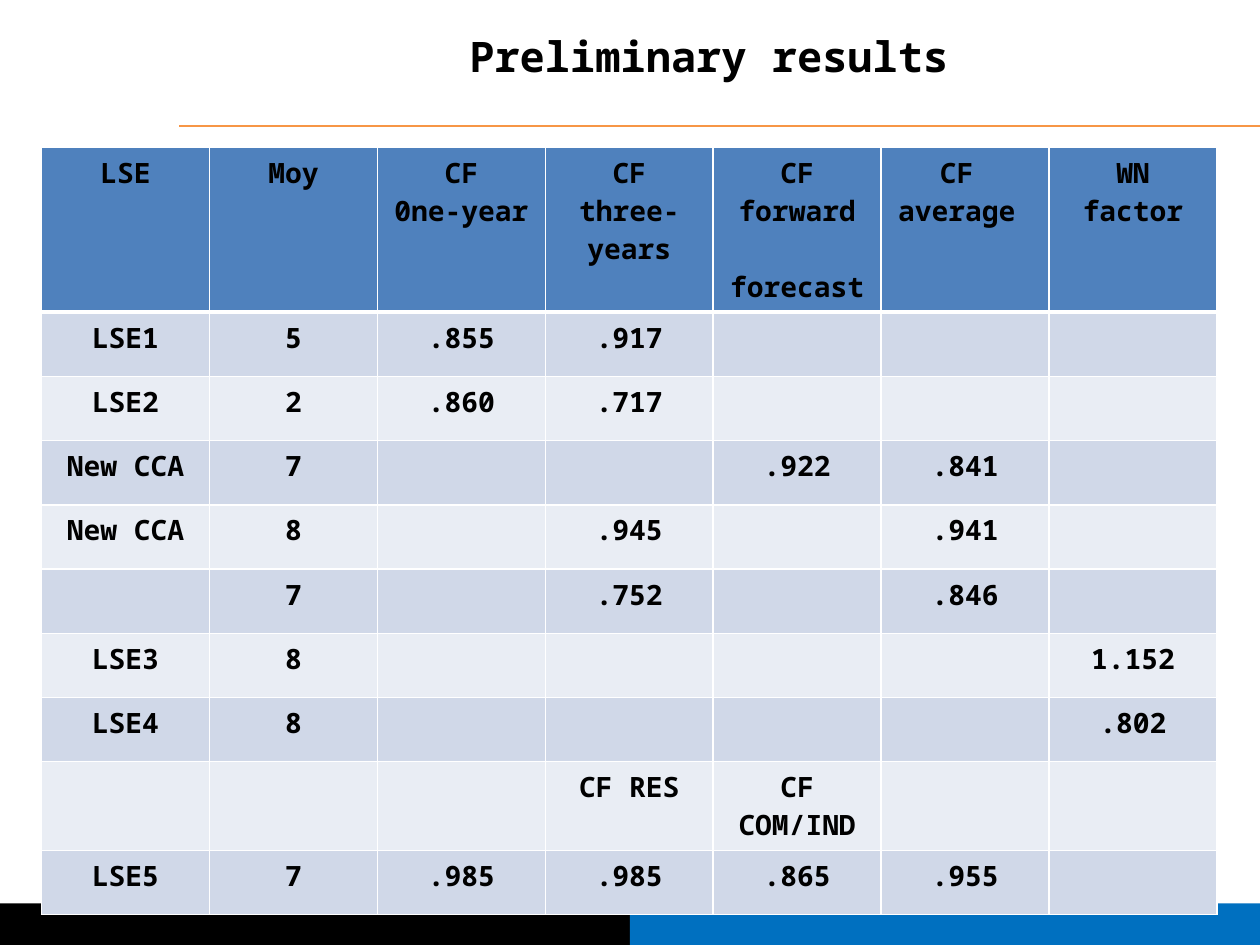
from lxml import etree
from pptx import Presentation
from pptx.dml.color import RGBColor
from pptx.enum.shapes import MSO_CONNECTOR, MSO_SHAPE
from pptx.enum.text import MSO_ANCHOR, PP_ALIGN
from pptx.oxml.ns import qn
from pptx.util import Inches, Pt

CENTER = PP_ALIGN.CENTER
TOP = MSO_ANCHOR.TOP
RECTANGLE = MSO_SHAPE.RECTANGLE
STRAIGHT = MSO_CONNECTOR.STRAIGHT
FONT = "Noto Sans Mono"
HEADER_FILL = "4F81BD"
BAND_FILLS = ("E9EDF4", "D0D8E8")
TITLE_ONLY = 5

RESULTS = [
    ["LSE", "Moy", "CF\n0ne-year", "CF\nthree-years", "CF forward\n forecast",
     "CF \naverage ", "WN factor"],
    ["LSE1", "5", ".855", ".917", "", "", ""],
    ["LSE2", "2", ".860", ".717", "", "", ""],
    ["New CCA", "7", "", "", ".922", ".841", ""],
    ["New CCA", "8", "", ".945", "", ".941", ""],
    ["", "7", "", ".752", "", ".846", ""],
    ["LSE3", "8", "", "", "", "", "1.152"],
    ["LSE4", "8", "", "", "", "", ".802"],
    ["", "", "", "CF RES", "CF COM/IND", "", ""],
    ["LSE5", "7", ".985", ".985", ".865", ".955", ""],
]
ROW_HEIGHTS = [1.24] + [0.51] * 7 + [0.62, 0.51]


def color(hex_string):
    """Turn a hex string into a colour."""
    return RGBColor.from_string(hex_string)


def format_text(frame, size):
    """Centre every paragraph and set its runs in bold black."""
    for para in frame.paragraphs:
        para.alignment = CENTER
        for span in para.runs:
            span.font.name = FONT
            span.font.size = Pt(size)
            span.font.bold = True
            span.font.color.rgb = color("000000")


def add_title(page, left, top, width, height):
    """Place and format the title placeholder."""
    title = page.shapes.title
    title.left, title.top, title.width, title.height = map(
        Inches, (left, top, width, height))
    frame = title.text_frame
    frame.text = "Preliminary results"
    frame.vertical_anchor = TOP
    format_text(frame, 24)


def add_rule(page, left, top, width):
    """Draw the orange rule below the title."""
    rule = page.shapes.add_connector(
        STRAIGHT, Inches(left + width), Inches(top), Inches(left), Inches(top))
    rule.line.color.rgb = color("F79646")
    rule.line.width = Pt(0.75)
    etree.SubElement(rule._element.spPr, qn("a:effectLst"))


def add_footer(page, left, top, width, height):
    """Draw the footer as two bars of equal width."""
    half = width / 2
    for index, fill in enumerate(("000000", "0070C0")):
        bar = page.shapes.add_shape(
            RECTANGLE, Inches(left + index * half), Inches(top),
            Inches(half), Inches(height))
        bar.shadow.inherit = False
        bar.fill.solid()
        bar.fill.fore_color.rgb = color(fill)
        bar.line.fill.background()


def set_borders(cell, bottom_width):
    """Give a cell white borders, placed ahead of its fill."""
    properties = cell._tc.get_or_add_tcPr()
    widths = {"lnL": 1, "lnR": 1, "lnT": 1, "lnB": bottom_width}
    for index, (side, width) in enumerate(widths.items()):
        border = etree.Element(qn(f"a:{side}"), w=str(Pt(width)))
        fill = etree.SubElement(border, qn("a:solidFill"))
        etree.SubElement(fill, qn("a:srgbClr"), val="FFFFFF")
        properties.insert(index, border)


def add_results_table(page, left, top, width, height):
    """Build the results table with a header and banded rows."""
    column_count = len(RESULTS[0])
    table = page.shapes.add_table(
        len(RESULTS), column_count, Inches(left), Inches(top),
        Inches(width), Inches(height)).table
    for column in table.columns:
        column.width = Inches(width / column_count)
    for row_index, values in enumerate(RESULTS):
        table.rows[row_index].height = Inches(ROW_HEIGHTS[row_index])
        is_header = row_index == 0
        fill = HEADER_FILL if is_header else BAND_FILLS[row_index % 2]
        for column_index, value in enumerate(values):
            cell = table.cell(row_index, column_index)
            cell.text_frame.text = value
            format_text(cell.text_frame, 16)
            cell.fill.solid()
            cell.fill.fore_color.rgb = color(fill)
            set_borders(cell, 3 if is_header else 1)


def main():
    """Build the slide and save the deck."""
    deck = Presentation()
    deck.slide_width, deck.slide_height = Inches(10), Inches(7.5)
    page = deck.slides.add_slide(deck.slide_layouts[TITLE_ONLY])
    add_footer(page, 0, 7.17, 10, 0.33)
    add_rule(page, 1.42, 1, 8.58)
    add_title(page, 1.25, 0.19, 8.75, 0.51)
    add_results_table(page, 0.33, 1.17, 9.33, 5.93)
    deck.save("out.pptx")


if __name__ == "__main__":
    main()
